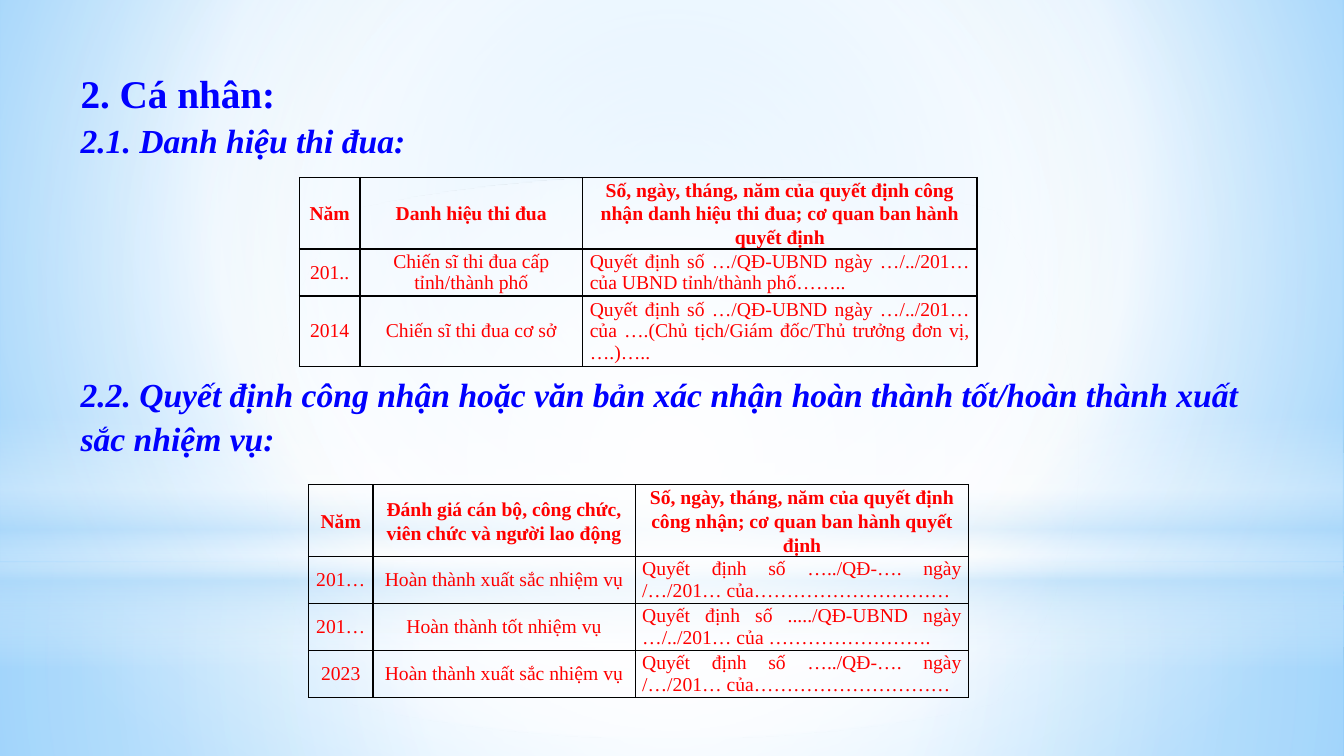
from lxml import etree
from pptx import Presentation
from pptx.dml.color import RGBColor
from pptx.enum.shapes import MSO_SHAPE
from pptx.enum.text import MSO_ANCHOR, PP_ALIGN
from pptx.oxml.ns import qn
from pptx.util import Inches, Pt

RECTANGLE, OVAL = MSO_SHAPE.RECTANGLE, MSO_SHAPE.OVAL
CENTER, JUSTIFY = PP_ALIGN.CENTER, PP_ALIGN.JUSTIFY
MIDDLE = MSO_ANCHOR.MIDDLE
FONT = "Times New Roman"
BLUE, RED, BLACK = "0000FF", "FF0000", "000000"
WIDTH, HEIGHT = 13.33, 7.5
HEADER_ROW, TEXT_LINE = 0.71, 0.215
CENTER_FOCUS = (50, 50, 50, 50)

BACKGROUND_STOPS = [(0, "9ED5FF", 100), (60, "FFFFFF", 100), (100, "5BB9FF", 100)]
GLOWS = [  # preset, top, height, stops (position, colour, opacity), focus
    (RECTANGLE, 5.58, 1.92,
     [(0, "FFFFFF", 91), (37, "FFFFFF", 76), (100, "B4DCFA", 79)], CENTER_FOCUS),
    (RECTANGLE, 0, 5.58,
     [(0, "FFFFFF", 89), (48, "FFFFFF", 62), (100, "B4DCFA", 79)], CENTER_FOCUS),
    (RECTANGLE, 4.12, 2.5,
     [(0, "FFFFFF", 0), (29, "FFFFFF", 30), (45, "B4DCFA", 40),
      (55, "FFFFFF", 26), (65, "B4DCFA", 60), (100, "FFFFFF", 0)], None),
    (OVAL, 1.75, 5.58, [(0, "FFFFFF", 100), (56, "FFFFFF", 0)], CENTER_FOCUS),
]

TITLE_ROWS = [
    ["Năm", "Danh hiệu thi đua",
     "Số, ngày, tháng, năm của quyết định công nhận danh hiệu thi đua; "
     "cơ quan ban hành quyết định"],
    ["201..", "Chiến sĩ thi đua cấp tỉnh/thành phố",
     "Quyết định số …/QĐ-UBND ngày …/../201… của UBND tỉnh/thành phố…….."],
    ["2014", "Chiến sĩ thi đua cơ sở",
     "Quyết định số …/QĐ-UBND ngày …/../201… của "
     "….(Chủ tịch/Giám đốc/Thủ trưởng đơn vị, ….)….."],
]
EXCELLENT = "Hoàn thành xuất sắc nhiệm vụ"
EXCELLENT_DECISION = "Quyết định số …../QĐ-…. ngày /…/201… của…………………………"
RATING_ROWS = [
    ["Năm", "Đánh giá cán bộ, công chức, viên chức và người lao động",
     "Số, ngày, tháng, năm của quyết định công nhận; cơ quan ban hành quyết định"],
    ["201…", EXCELLENT, EXCELLENT_DECISION],
    ["201…", "Hoàn thành tốt nhiệm vụ",
     "Quyết định số ...../QĐ-UBND ngày …/../201… của ……………………."],
    ["2023", EXCELLENT, EXCELLENT_DECISION],
]


def color(value):
    return RGBColor.from_string(value)


def add_element(parent, tag, **attributes):
    element = etree.SubElement(parent, qn(tag))
    for name, value in attributes.items():
        element.set(name, str(value))
    return element


def set_gradient(fill, owner, stops, focus):
    """Fill with stops around a focus rectangle, or downwards without a focus."""
    fill.gradient()
    gradient = owner.find(".//" + qn("a:gradFill"))
    for child in list(gradient):
        gradient.remove(child)
    stop_list = add_element(gradient, "a:gsLst")
    for position, value, opacity in stops:
        stop = add_element(stop_list, "a:gs", pos=position * 1000)
        tone = add_element(stop, "a:srgbClr", val=value)
        if opacity < 100:
            add_element(tone, "a:alpha", val=opacity * 1000)
    if focus:
        circle = add_element(gradient, "a:path", path="circle")
        sides = {side: share * 1000 for side, share in zip("ltrb", focus)}
        add_element(circle, "a:fillToRect", **sides)
    else:
        add_element(gradient, "a:lin", ang=5400000, scaled=0)


def add_backdrop(slide):
    set_gradient(slide.background.fill, slide.element, BACKGROUND_STOPS, (20, 10, 20, 60))
    for preset, top, height, stops, focus in GLOWS:
        glow = slide.shapes.add_shape(
            preset, 0, Inches(top), Inches(WIDTH), Inches(height))
        glow.shadow.inherit = False
        glow.line.fill.background()
        set_gradient(glow.fill, glow.element, stops, focus)


def add_run(paragraph, text, size, value, bold=False, italic=False):
    run = paragraph.add_run()
    run.text = text
    font = run.font
    font.name, font.size, font.bold, font.italic = FONT, Pt(size), bold, italic
    font.color.rgb = color(value)


def add_headings(slide, top, height, headings):
    """Stack headings, each a text with its size and italic flag."""
    box = slide.shapes.add_textbox(
        Inches(0.7), Inches(top), Inches(11.85), Inches(height))
    frame = box.text_frame
    frame.word_wrap = True
    for index, (text, size, italic) in enumerate(headings):
        paragraph = frame.add_paragraph() if index else frame.paragraphs[0]
        paragraph.line_spacing = 1.08
        add_run(paragraph, text, size, BLUE, bold=True, italic=italic)


def add_borders(cell):
    properties = cell._tc.get_or_add_tcPr()
    for index, side in enumerate(("a:lnL", "a:lnR", "a:lnT", "a:lnB")):
        line = etree.Element(qn(side), w=str(Pt(1)))
        solid = add_element(line, "a:solidFill")
        add_element(solid, "a:srgbClr", val=BLACK)
        properties.insert(index, line)


def fill_cell(cell, text, is_header, alignment):
    cell.fill.background()
    add_borders(cell)
    cell.vertical_anchor = MIDDLE
    cell.margin_left = cell.margin_right = Inches(0.07)
    cell.margin_top = cell.margin_bottom = 0
    paragraph = cell.text_frame.paragraphs[0]
    paragraph.alignment = alignment
    if is_header:
        paragraph.line_spacing = Pt(17)
    add_run(paragraph, text, 14, RED, bold=is_header)


def add_decision_table(slide, left, top, widths, line_counts, rows):
    """Place a table whose body rows are as tall as their number of text lines."""
    heights = [HEADER_ROW] + [count * TEXT_LINE for count in line_counts]
    table = slide.shapes.add_table(
        len(rows), len(widths), Inches(left), Inches(top),
        Inches(sum(widths)), Inches(sum(heights))).table
    table.first_row = table.horz_banding = False
    for column, width in zip(table.columns, widths):
        column.width = Inches(width)
    for row_index, (texts, height) in enumerate(zip(rows, heights)):
        table.rows[row_index].height = Inches(height)
        is_header = row_index == 0
        for column_index, text in enumerate(texts):
            is_decision = column_index == 2 and not is_header
            fill_cell(table.cell(row_index, column_index), text, is_header,
                      JUSTIFY if is_decision else CENTER)


def add_individual_slide(presentation):
    slide = presentation.slides.add_slide(presentation.slide_layouts[6])
    add_backdrop(slide)
    add_headings(slide, 0.6, 1, [("2. Cá nhân:", 28, False),
                                 ("2.1. Danh hiệu thi đua:", 24, True)])
    add_headings(slide, 3.63, 0.95, [
        ("2.2. Quyết định công nhận hoặc văn bản xác nhận hoàn thành tốt/hoàn thành "
         "xuất sắc nhiệm vụ:", 24, True)])
    add_decision_table(slide, 2.97, 1.76, (0.6, 2.21, 3.91), (2, 3), TITLE_ROWS)
    add_decision_table(slide, 3.06, 4.81, (0.64, 2.6, 3.31), (2, 2, 2), RATING_ROWS)


def main():
    presentation = Presentation()
    presentation.slide_width = Inches(WIDTH)
    presentation.slide_height = Inches(HEIGHT)
    add_individual_slide(presentation)
    presentation.save("out.pptx")


if __name__ == "__main__":
    main()
